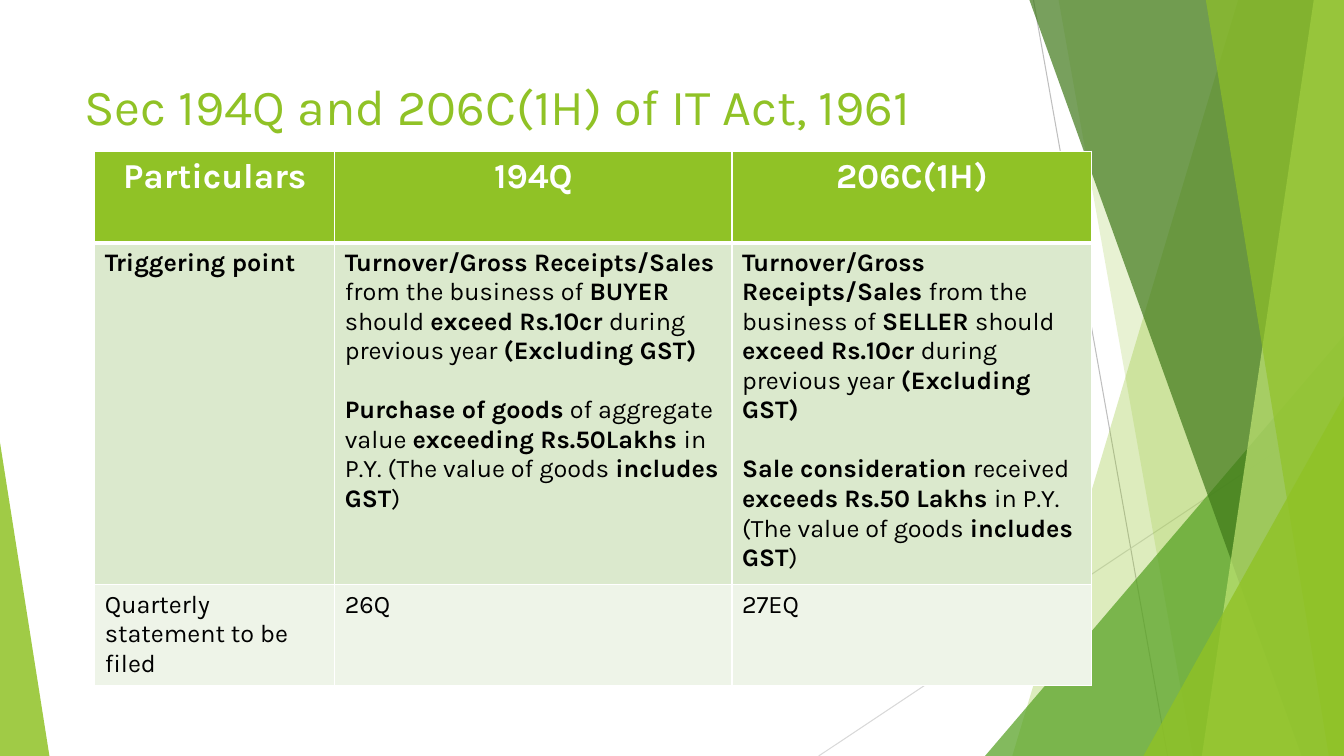
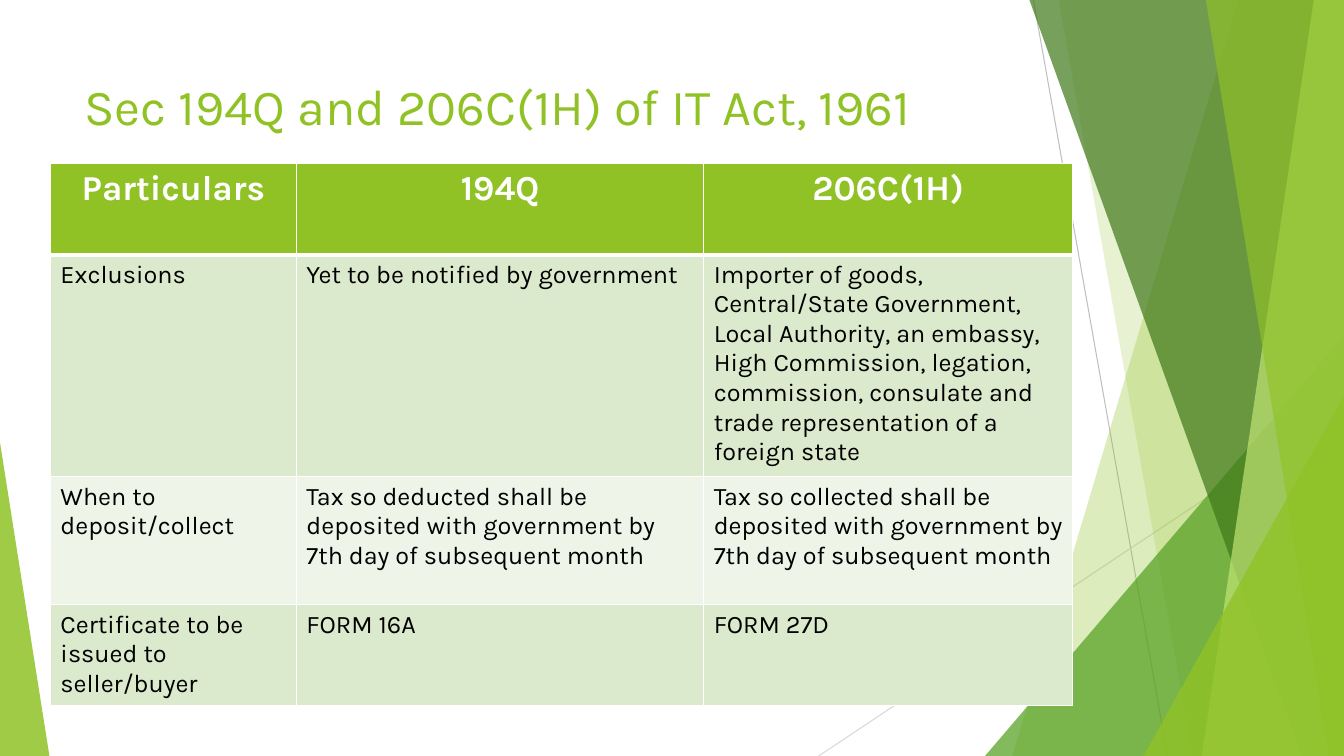
from lxml import etree
from pptx import Presentation
from pptx.dml.color import RGBColor
from pptx.enum.shapes import MSO_CONNECTOR, MSO_SHAPE
from pptx.enum.text import MSO_ANCHOR, PP_ALIGN
from pptx.oxml.ns import qn
from pptx.util import Inches, Pt

STRAIGHT = MSO_CONNECTOR.STRAIGHT
TRIANGLE = MSO_SHAPE.ISOSCELES_TRIANGLE
TOP = MSO_ANCHOR.TOP
CENTER, LEFT = PP_ALIGN.CENTER, PP_ALIGN.LEFT

WHITE = RGBColor(0xFF, 0xFF, 0xFF)
BLACK = RGBColor(0x00, 0x00, 0x00)
GREEN = RGBColor(0x90, 0xC2, 0x26)
LEAF = RGBColor(0x54, 0xA0, 0x21)
FOREST = RGBColor(0x3F, 0x78, 0x19)
LIME = RGBColor(0xC0, 0xE4, 0x74)
BAND_DARK = RGBColor(0xDB, 0xE9, 0xCD)
BAND_LIGHT = RGBColor(0xEE, 0xF4, 0xE8)
GREY = RGBColor(0xBF, 0xBF, 0xBF)
PALE_GREY = RGBColor(0xD9, 0xD9, 0xD9)

FONT = "Karla"
WIDTH, HEIGHT = 13.33, 7.5
TITLE = "Sec 194Q and 206C(1H) of IT Act, 1961"
TITLE_BOX = (0.74, 0.7, 9.4, 0.81)
HEADINGS = ("Particulars", "194Q", "206C(1H)")

HAIRLINES = (
    ((10.25, 0), (11.58, HEIGHT), GREY),
    ((WIDTH, 4.03), (8.12, HEIGHT), PALE_GREY),
)
# BANDS

SHARDS = (
    ("band", 12.28, 10.04, GREEN, 30),
    ("band", 10.5, 11.83, GREEN, 20),
    ("corner", 9.77, 3.33, LEAF, 72),
    ("band", 10.21, 12.91, FOREST, 70),
    ("band", 13.03, 11.92, LIME, 70),
    ("band", 11.96, 13.18, GREEN, 65),
    ("corner", 11.34, 3.93, GREEN, 80),
)

TRIGGER_ROWS = (
    (
        "**Triggering point**",
        "**Turnover/Gross Receipts/Sales **from the business of **BUYER** should "
        "**exceed Rs.10cr **during previous year **(Excluding GST)**\n"
        "**Purchase of goods** of aggregate value **exceeding Rs.50Lakhs **"
        "in P.Y. (The value of goods **includes GST**)",
        "**Turnover/Gross Receipts/Sales **from the business of **SELLER **should "
        "**exceed Rs.10cr **during previous year **(Excluding GST)**\n"
        "**Sale consideration **received **exceeds Rs.50 Lakhs **"
        "in P.Y. (The value of goods **includes GST**)",
    ),
    ("Quarterly statement to be filed", "26Q", "27EQ"),
)
DEPOSIT = "Tax so {} shall be deposited with government by 7th day of subsequent month"
FILING_ROWS = (
    (
        "Exclusions",
        "Yet to be notified by government",
        "Importer of goods, Central/State Government, Local Authority, an embassy, "
        "High Commission, legation, commission, consulate and trade representation "
        "of a foreign state",
    ),
    ("When to deposit/collect", DEPOSIT.format("deducted"), DEPOSIT.format("collected")),
    ("Certificate to be issued to seller/buyer", "FORM 16A", "FORM 27D"),
)


def paint(shape, color, opacity):
    """Give a shape a see-through fill without line or shadow."""
    shape.shadow.inherit = False
    shape.line.fill.background()
    shape.fill.solid()
    shape.fill.fore_color.rgb = color
    tint = next(shape.element.spPr.iter(qn("a:srgbClr")))
    etree.SubElement(tint, qn("a:alpha"), val=str(opacity * 1000))


def add_triangle(page, box, apex, color, opacity):
    """Draw a right-angled triangle with its apex at one side of the box."""
    shape = page.shapes.add_shape(TRIANGLE, *map(Inches, box))
    shape.adjustments[0] = apex
    paint(shape, color, opacity)


def add_band(page, top_x, bottom_x, color, opacity):
    """Draw a slanted band that reaches the right edge of the page."""
    corners = ((top_x, 0), (WIDTH, 0), (WIDTH, HEIGHT), (bottom_x, HEIGHT))
    points = [(Inches(x), Inches(y)) for x, y in corners]
    builder = page.shapes.build_freeform(*points[0], scale=1.0)
    builder.add_line_segments(points[1:], close=True)
    paint(builder.convert_to_shape(), color, opacity)


def add_backdrop(page):
    """Draw the hairlines and green shards behind the content."""
    for start, end, color in HAIRLINES:
        line = page.shapes.add_connector(STRAIGHT, *map(Inches, start + end))
        line.line.color.rgb = color
        line.line.width = Pt(0.75)
        etree.SubElement(line.element.spPr, qn("a:effectLst"))
    for kind, first, second, color, opacity in SHARDS:
        if kind == "band":
            add_band(page, first, second, color, opacity)
        else:
            box = (first, second, WIDTH - first, HEIGHT - second)
            add_triangle(page, box, 1, color, opacity)
    add_triangle(page, (0, 4.39, 0.49, HEIGHT - 4.39), 0, GREEN, 85)


def style(para, size, color, bold=False):
    """Set the font of a whole paragraph."""
    para.font.name = FONT
    para.font.size = Pt(size)
    para.font.color.rgb = color
    para.font.bold = bold


def add_title(page, box):
    """Place the shared title in the given box."""
    frame = page.shapes.add_textbox(*map(Inches, box)).text_frame
    frame.word_wrap = True
    frame.vertical_anchor = TOP
    frame.text = TITLE
    style(frame.paragraphs[0], 36, GREEN)


def add_borders(cell, top, bottom):
    """Draw white cell borders with the given top and bottom widths."""
    properties = cell._tc.get_or_add_tcPr()
    for side, width in (("L", 1), ("R", 1), ("T", top), ("B", bottom)):
        line = etree.SubElement(properties, qn("a:ln" + side), w=str(Pt(width)))
        fill = etree.SubElement(line, qn("a:solidFill"))
        etree.SubElement(fill, qn("a:srgbClr"), val=str(WHITE))


def write_cell(cell, text, size, color, align):
    """Write paragraphs in which double asterisks switch bold on and off."""
    for index, line in enumerate(text.split("\n")):
        para = cell.text_frame.paragraphs[0] if index == 0 else cell.text_frame.add_paragraph()
        style(para, size, color)
        para.alignment = align
        para.space_before = Pt(21 * index)
        for number, part in enumerate(line.split("**")):
            if part:
                span = para.add_run()
                span.text = part
                if number % 2:
                    span.font.bold = True


def add_comparison(page, left, top, widths, heights, rows):
    """Place a table that compares the two sections."""
    headings = tuple(f"**{heading}**" for heading in HEADINGS)
    lines = (headings,) + rows
    table = page.shapes.add_table(
        len(lines), len(widths), Inches(left), Inches(top),
        Inches(sum(widths)), Inches(sum(heights)),
    ).table
    for column, width in zip(table.columns, widths):
        column.width = Inches(width)
    for index, (row, height, texts) in enumerate(zip(table.rows, heights, lines)):
        row.height = Inches(height)
        header = index == 0
        band = BAND_DARK if index % 2 else BAND_LIGHT
        for cell, text in zip(row.cells, texts):
            add_borders(cell, 3 if index == 1 else 1, 3 if header else 1)
            cell.fill.solid()
            cell.fill.fore_color.rgb = GREEN if header else band
            if header:
                write_cell(cell, text, 25, WHITE, CENTER)
            else:
                write_cell(cell, text, 18, BLACK, LEFT)


def add_page(deck, left, top, widths, heights, rows):
    """Add a slide with backdrop, title and comparison table."""
    page = deck.slides.add_slide(deck.slide_layouts[6])
    add_backdrop(page)
    add_title(page, TITLE_BOX)
    add_comparison(page, left, top, widths, heights, rows)


def main():
    """Build and save the deck."""
    deck = Presentation()
    deck.slide_width, deck.slide_height = Inches(WIDTH), Inches(HEIGHT)
    add_page(deck, 0.94, 1.5, (2.38, 3.94, 3.57), (0.91, 3.32, 0.99), TRIGGER_ROWS)
    add_page(deck, 0.5, 1.62, (2.44, 4.04, 3.66), (0.91, 2.14, 1.27, 0.97), FILING_ROWS)
    deck.save("out.pptx")


if __name__ == "__main__":
    main()
